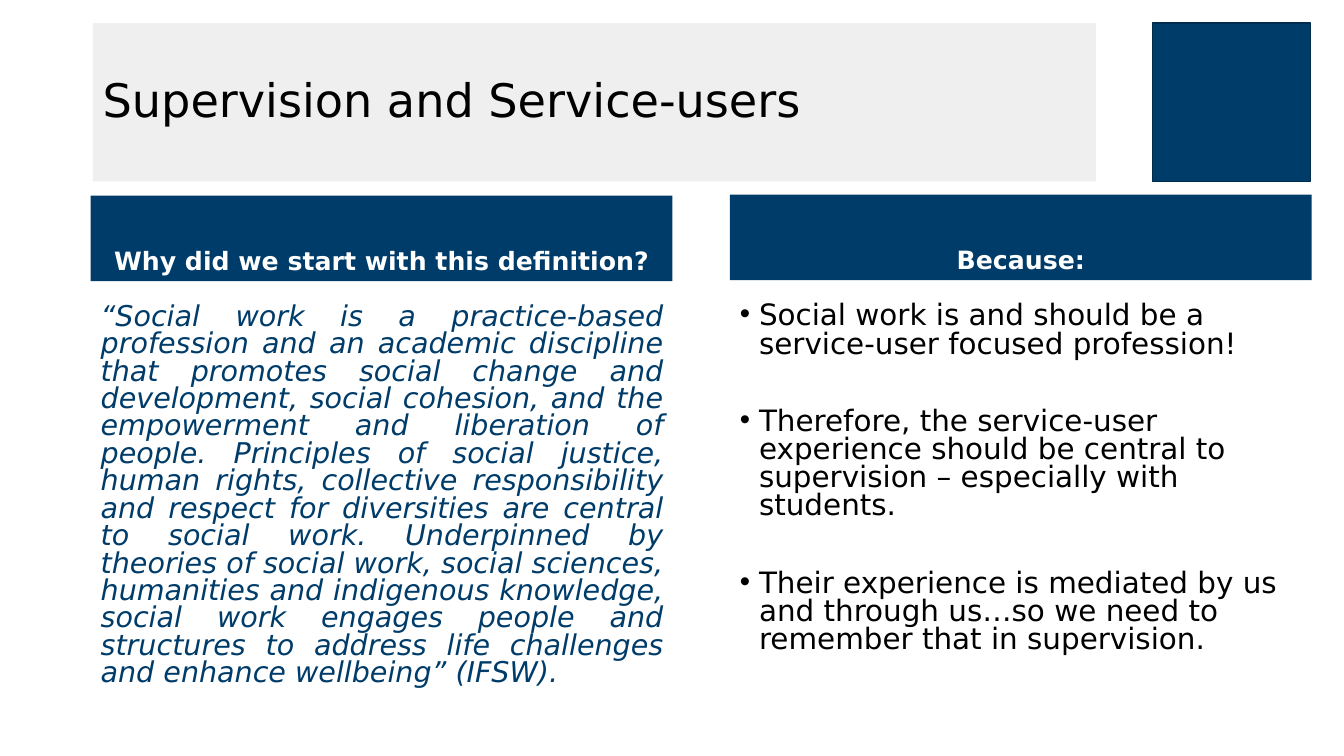
from lxml.etree import SubElement
from pptx import Presentation
from pptx.dml.color import RGBColor
from pptx.enum.shapes import MSO_SHAPE
from pptx.enum.text import MSO_ANCHOR, PP_ALIGN
from pptx.oxml.ns import qn
from pptx.util import Emu, Pt

PX = 9144  # 100 px to the inch
FONT = "DejaVu Sans"
COLORS = {
    "navy": "003C69",
    "navy edge": "002C4E",
    "pale gray": "EFEFF0",
    "white": "FFFFFF",
    "black": "000000",
}

deck = Presentation()
deck.slide_width, deck.slide_height = Emu(1333 * PX), Emu(750 * PX)
page = deck.slides.add_slide(deck.slide_layouts[6])


def add_panel(left, top, width, height, fill=None):
    """Add a rectangle without outline, filled only if a colour is named."""
    place = [Emu(value * PX) for value in (left, top, width, height)]
    if fill is None:
        panel = page.shapes.add_textbox(*place)
    else:
        panel = page.shapes.add_shape(MSO_SHAPE.RECTANGLE, *place)
        panel.shadow.inherit = False
        panel.fill.solid()
        panel.fill.fore_color.rgb = RGBColor.from_string(COLORS[fill])
        panel.line.fill.background()
    panel.text_frame.word_wrap = True
    return panel


def write(para, text, size, color, spacing, align, bold=False, italic=False):
    para.alignment = align
    para.line_spacing = spacing
    span = para.add_run()
    span.text = text
    span.font.name = FONT
    span.font.size = Pt(size)
    span.font.bold = bold
    span.font.italic = italic
    span.font.color.rgb = RGBColor.from_string(COLORS[color])


# Title band and corner square
corner = add_panel(1143, 23, 157, 157, "navy")
corner.line.color.rgb = RGBColor.from_string(COLORS["navy edge"])
corner.line.width = Pt(1)

title = add_panel(92, 23, 995, 157, "pale gray").text_frame
title.vertical_anchor = MSO_ANCHOR.MIDDLE
write(title.paragraphs[0], "Supervision and Service-users", 33, "black", 0.9, PP_ALIGN.LEFT)

# Column headings
headings = [
    (90, 194, "Why did we start with this definition?"),
    (724, 193, "Because:"),
]
for left, top, text in headings:
    heading = add_panel(left, top, 577, 85, "navy").text_frame
    heading.vertical_anchor = MSO_ANCHOR.BOTTOM
    write(heading.paragraphs[0], text, 18, "white", 0.9, PP_ALIGN.CENTER, bold=True)

# Definition
definition = (
    "“Social work is a practice-based profession and an academic discipline that "
    "promotes social change and development, social cohesion, and the empowerment "
    "and liberation of people. Principles of social justice, human rights, collective "
    "responsibility and respect for diversities are central to social work. "
    "Underpinned by theories of social work, social sciences, humanities and "
    "indigenous knowledge, social work engages people and structures to address life "
    "challenges and enhance wellbeing” (IFSW)."
)
quote = add_panel(90, 297, 578, 392).text_frame
write(quote.paragraphs[0], definition, 20.4, "navy", 0.8, PP_ALIGN.JUSTIFY, italic=True)

# Reasons
reasons = [
    "Social work is and should be a service-user focused profession!",
    "Therefore, the service-user experience should be central to supervision – "
    "especially with students.",
    "Their experience is mediated by us and through us…so we need to remember that "
    "in supervision.",
]
reason_list = add_panel(724, 296, 577, 392).text_frame
for index, reason in enumerate(reasons):
    para = reason_list.add_paragraph() if index else reason_list.paragraphs[0]
    properties = para._p.get_or_add_pPr()
    properties.set("marL", str(19 * PX))
    properties.set("indent", str(-19 * PX))
    SubElement(properties, qn("a:buFont"), typeface="Arial")
    SubElement(properties, qn("a:buChar"), char="•")
    if index:
        para.space_before = Pt(35)
    write(para, reason, 21, "black", 0.8, PP_ALIGN.LEFT)

deck.save("out.pptx")
